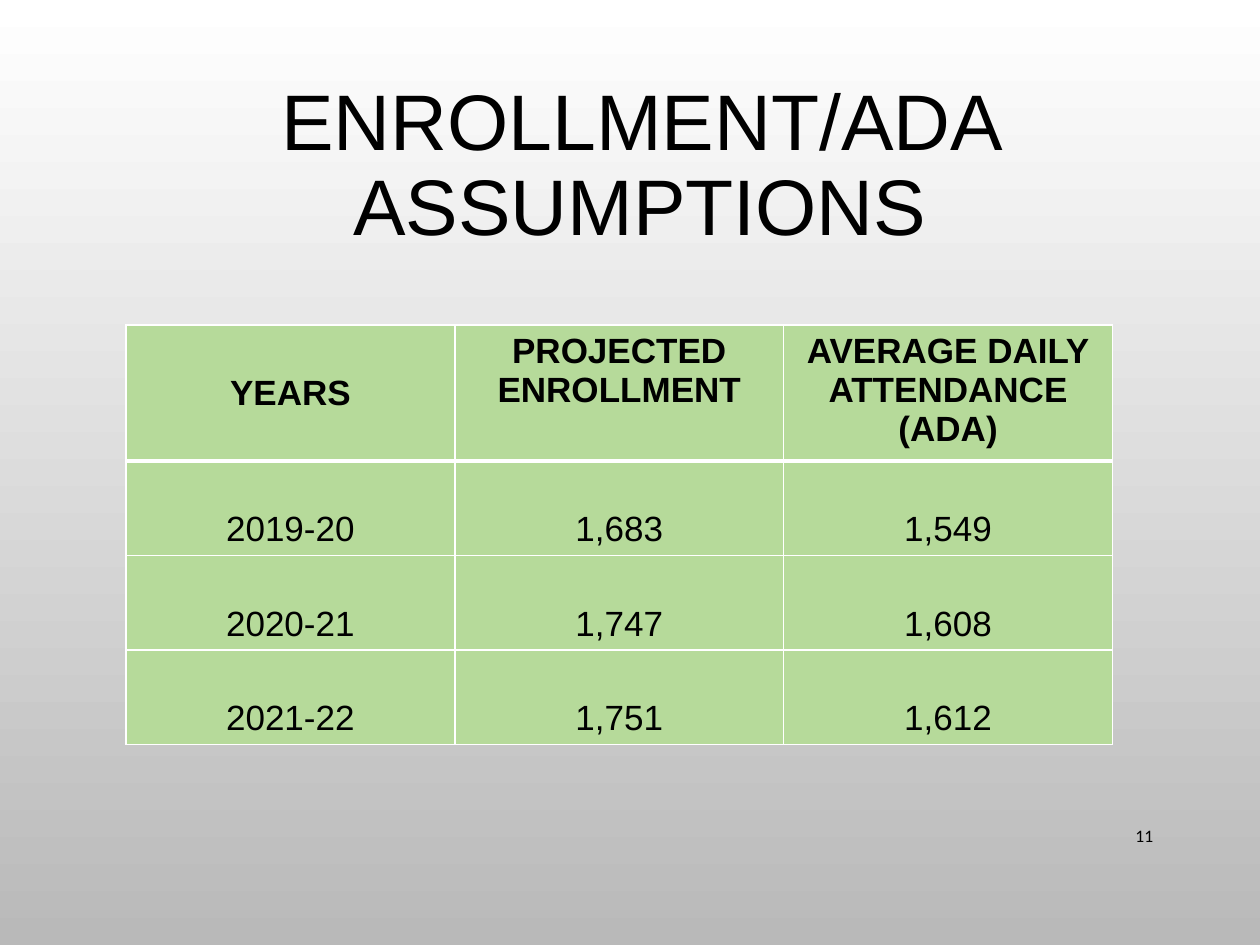
from lxml import etree
from pptx import Presentation
from pptx.dml.color import RGBColor
from pptx.enum.text import MSO_ANCHOR, PP_ALIGN
from pptx.oxml.ns import qn
from pptx.util import Inches, Pt

TOP, MIDDLE, BOTTOM = MSO_ANCHOR.TOP, MSO_ANCHOR.MIDDLE, MSO_ANCHOR.BOTTOM
CENTER, RIGHT = PP_ALIGN.CENTER, PP_ALIGN.RIGHT
BLACK, WHITE, GREEN, GRAY = "000000", "FFFFFF", "B6DA9A", "B9B9B9"
rgb = RGBColor.from_string


def write_lines(frame, lines, size, align, font="Arial", bold=False):
    for i, line in enumerate(lines):
        paragraph = frame.paragraphs[0] if i == 0 else frame.add_paragraph()
        paragraph.alignment = align
        run = paragraph.add_run()
        run.text = line
        run.font.name = font
        run.font.size = Pt(size)
        run.font.bold = bold
        run.font.color.rgb = rgb(BLACK)


def add_border(cell, side, points):
    line = etree.Element(qn(f"a:{side}"), w=str(Pt(points)))
    fill = etree.SubElement(line, qn("a:solidFill"))
    etree.SubElement(fill, qn("a:srgbClr"), val=WHITE)
    cell._tc.get_or_add_tcPr().append(line)


prs = Presentation()
prs.slide_width, prs.slide_height = Inches(10), Inches(7.5)
slide = prs.slides.add_slide(prs.slide_layouts[5])

background = slide.background.fill
background.gradient()
background.gradient_angle = 270
for stop, color, position in zip(background.gradient_stops, (WHITE, GRAY), (0, 1)):
    stop.color.rgb = rgb(color)
    stop.position = position

title = slide.shapes.title
title.left, title.top = Inches(0.58), Inches(1)
title.width, title.height = Inches(9), Inches(0.66)
title.text_frame.vertical_anchor = MIDDLE
title.text_frame.word_wrap = True
write_lines(title.text_frame, ["ENROLLMENT/ADA ASSUMPTIONS"], 45, CENTER)
title.text_frame.paragraphs[0].line_spacing = 0.9

rows = [
    (["YEARS"], ["PROJECTED", "ENROLLMENT"], ["AVERAGE DAILY", "ATTENDANCE (ADA)"]),
    (["2019-20"], ["1,683"], ["1,549"]),
    (["2020-21"], ["1,747"], ["1,608"]),
    (["2021-22"], ["1,751"], ["1,612"]),
]
table = slide.shapes.add_table(
    4, 3, Inches(1), Inches(2.58), Inches(7.83), Inches(3.33)
).table
table.horz_banding = False
for column in table.columns:
    column.width = Inches(2.61)
for r, row in enumerate(rows):
    header = r == 0
    table.rows[r].height = Inches(1.08 if header else 0.75)
    for c, lines in enumerate(row):
        cell = table.cell(r, c)
        write_lines(cell.text_frame, lines, 20, CENTER, bold=header)
        if header:
            cell.vertical_anchor = MIDDLE if c == 0 else TOP
        else:
            cell.vertical_anchor = BOTTOM
        for side in ("lnL", "lnR", "lnT", "lnB"):
            heavy = (header and side == "lnB") or (r == 1 and side == "lnT")
            add_border(cell, side, 3 if heavy else 1)
        cell.fill.solid()
        cell.fill.fore_color.rgb = rgb(GREEN)

page_number = slide.shapes.add_textbox(
    Inches(8.62), Inches(6.43), Inches(0.63), Inches(0.4)
).text_frame
page_number.word_wrap = True
page_number.vertical_anchor = MIDDLE
write_lines(page_number, ["11"], 10, RIGHT, font="Calibri")

prs.save("out.pptx")
